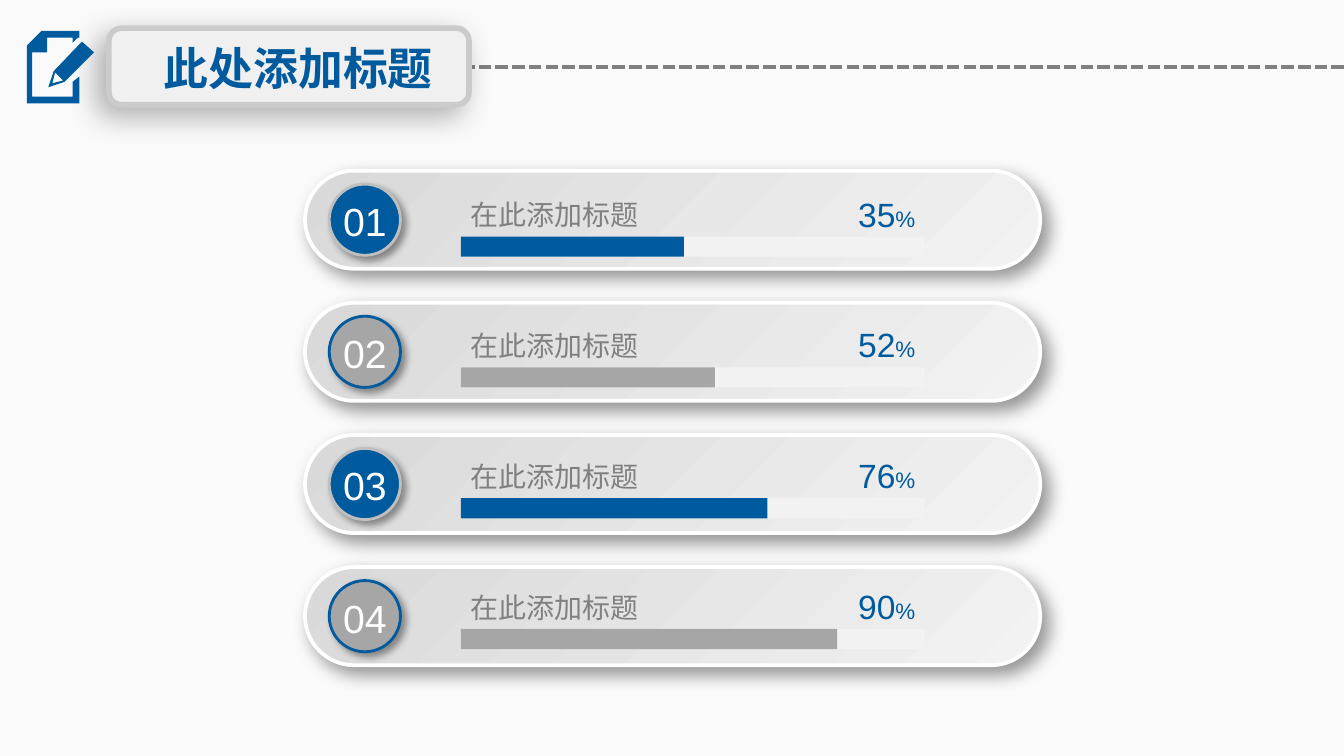
from dataclasses import dataclass
from typing import Optional

from lxml.etree import SubElement
from pptx import Presentation
from pptx.dml.color import RGBColor
from pptx.enum.dml import MSO_LINE
from pptx.enum.shapes import MSO_CONNECTOR, MSO_SHAPE
from pptx.enum.text import MSO_ANCHOR, MSO_AUTO_SIZE, PP_ALIGN
from pptx.oxml.ns import qn
from pptx.util import Inches, Pt


@dataclass(frozen=True)
class Theme:
    font: str = "Arial"
    blue: str = "005A9E"
    grey: str = "A6A6A6"
    text_grey: str = "808080"
    silver: str = "BFBFBF"
    frame: str = "CBCBCB"
    white: str = "FFFFFF"
    track: str = "F2F2F2"
    page_fill: tuple = ("FAFAFA", "FCFCFC")
    title_fill: tuple = ("F0F0F0", "F1F1F1")
    pill_fill: tuple = ("D9D9D9", "F2F2F2")
    title_size: int = 24
    number_size: int = 21
    value_size: int = 18
    label_size: int = 15
    percent_size: int = 12


@dataclass(frozen=True)
class Area:
    left: float
    top: float
    width: float
    height: float

    def lengths(self) -> tuple:
        return tuple(Inches(v) for v in (self.left, self.top, self.width, self.height))


@dataclass(frozen=True)
class Shadow:
    opacity: int
    blur: float
    distance: float
    angle: int


@dataclass(frozen=True)
class Progress:
    number: str
    label: str
    value: str
    bar_width: float
    fill: str
    ring: str


THEME = Theme()
LABEL = "在此添加标题"
ROWS = [
    Progress("01", LABEL, "35", 1.66, THEME.blue, THEME.silver),
    Progress("02", LABEL, "52", 1.89, THEME.grey, THEME.blue),
    Progress("03", LABEL, "76", 2.28, THEME.blue, THEME.silver),
    Progress("04", LABEL, "90", 2.80, THEME.grey, THEME.blue),
]
# Pills and their contents are spread over slightly different heights
PILL_PITCH = 2.95 / 3
BAR_PITCH = 2.92 / 3

# Icon outlines, in hundredths of an inch
SHEET = [[(54, 72), (24, 72), (24, 39), (35, 39), (35, 28), (54, 28), (54, 32),
          (58, 28), (59, 28), (59, 23), (31, 23), (20, 34), (20, 77), (59, 77),
          (59, 57), (54, 61)]]
PENCIL = [[(40, 53), (36, 65), (48, 61), (70, 39), (61, 31)],
          [(47, 60), (39, 62), (41, 54)]]


def rgb(color: str) -> RGBColor:
    return RGBColor.from_string(color)


def paint(fill, color) -> None:
    """Fill with one colour, or with a diagonal blend of two."""
    if isinstance(color, str):
        fill.solid()
        fill.fore_color.rgb = rgb(color)
        return
    fill.gradient()
    fill.gradient_angle = 315
    for stop, stop_color in zip(fill.gradient_stops, color):
        stop.color.rgb = rgb(stop_color)


def add_shadow(shape, shadow: Shadow) -> None:
    effects = shape.element.spPr.find(qn("a:effectLst"))
    outer = SubElement(effects, qn("a:outerShdw"), blurRad=str(Pt(shadow.blur)),
                       dist=str(Pt(shadow.distance)), dir=str(shadow.angle * 60000),
                       algn="ctr", rotWithShape="0")
    color = SubElement(outer, qn("a:srgbClr"), val="000000")
    SubElement(color, qn("a:alpha"), val=str(shadow.opacity * 1000))


def add_box(shapes, kind, area: Area, fill, line: Optional[str] = None,
            line_width: float = 0, shadow: Optional[Shadow] = None):
    box = shapes.add_shape(kind, *area.lengths())
    box.shadow.inherit = False
    paint(box.fill, fill)
    if line:
        box.line.color.rgb = rgb(line)
        box.line.width = Pt(line_width)
    else:
        box.line.fill.background()
    if shadow:
        add_shadow(box, shadow)
    return box


def format_span(span, size: int, color: str, bold: bool = False) -> None:
    span.font.name = THEME.font
    span.font.size = Pt(size)
    span.font.bold = bold
    span.font.color.rgb = rgb(color)


def add_text(shapes, area: Area, text: str, size: int, color: str,
             align=PP_ALIGN.LEFT, insets: tuple = (0.07, 0.04)):
    frame = shapes.add_textbox(*area.lengths()).text_frame
    frame.word_wrap = True
    frame.auto_size = MSO_AUTO_SIZE.SHAPE_TO_FIT_TEXT
    frame.margin_left = frame.margin_right = Inches(insets[0])
    frame.margin_top = frame.margin_bottom = Inches(insets[1])
    frame.text = text
    para = frame.paragraphs[0]
    para.alignment = align
    format_span(para.runs[0], size, color)
    return para


def add_outline(shapes, contours: list, color: str) -> None:
    builder = shapes.build_freeform(*contours[0][0], scale=Inches(0.01))
    for index, points in enumerate(contours):
        if index:
            builder.move_to(*points[0])
        builder.add_line_segments(points[1:], close=True)
    outline = builder.convert_to_shape()
    outline.shadow.inherit = False
    paint(outline.fill, color)
    outline.line.fill.background()


def add_header(page, title_text: str) -> None:
    # Dashed rule
    rule = page.shapes.add_connector(MSO_CONNECTOR.STRAIGHT, Inches(10), Inches(0.5),
                                     Inches(3.19), Inches(0.5))
    rule.line.color.rgb = rgb(THEME.text_grey)
    rule.line.width = Pt(2.25)
    rule.line.dash_style = MSO_LINE.SQUARE_DOT
    SubElement(rule.element.spPr, qn("a:effectLst"))

    # Title on its plate
    plate = add_box(page.shapes, MSO_SHAPE.ROUNDED_RECTANGLE, Area(0.81, 0.21, 2.68, 0.57),
                    THEME.title_fill, THEME.frame, 3, Shadow(30, 16, 7, 135))
    title = page.shapes.title
    title.left, title.top, title.width, title.height = Area(1.12, 0.25, 2.22, 0.5).lengths()
    frame = title.text_frame
    frame.text = title_text
    frame.word_wrap = False
    frame.auto_size = MSO_AUTO_SIZE.SHAPE_TO_FIT_TEXT
    frame.vertical_anchor = MSO_ANCHOR.TOP
    para = frame.paragraphs[0]
    para.alignment = PP_ALIGN.LEFT
    format_span(para.runs[0], THEME.title_size, THEME.blue, bold=True)
    plate.element.addnext(title.element)

    # Sheet and pencil icon
    icon = page.shapes.add_group_shape()
    for contours in (SHEET, PENCIL):
        add_outline(icon.shapes, contours, THEME.blue)


def add_progress(page, index: int, row: Progress) -> None:
    shapes = page.shapes.add_group_shape().shapes
    pill_shift, bar_shift = index * PILL_PITCH, index * BAR_PITCH

    # Pill and numbered disc
    pill = add_box(shapes, MSO_SHAPE.ROUNDED_RECTANGLE, Area(2.27, 1.27 + pill_shift, 5.47, 0.73),
                   THEME.pill_fill, THEME.white, 2, Shadow(40, 9, 5, 45))
    pill.adjustments[0] = 0.5
    add_box(shapes, MSO_SHAPE.OVAL, Area(2.45, 1.37 + pill_shift, 0.53, 0.53),
            row.fill, row.ring, 1.5, Shadow(40, 4, 3, 45))
    add_text(shapes, Area(2.41, 1.42 + pill_shift, 0.61, 0.45), row.number,
             THEME.number_size, THEME.white, PP_ALIGN.CENTER, (0.1, 0.05))

    # Track and bar
    for width, color in ((3.45, THEME.track), (row.bar_width, row.fill)):
        add_box(shapes, MSO_SHAPE.RECTANGLE, Area(3.43, 1.76 + bar_shift, width, 0.15), color)

    # Label and percentage
    add_text(shapes, Area(3.43, 1.43 + bar_shift, 1.89, 0.33), row.label,
             THEME.label_size, THEME.text_grey)
    para = add_text(shapes, Area(6.09, 1.4 + bar_shift, 0.79, 0.38), row.value,
                    THEME.value_size, THEME.blue, PP_ALIGN.RIGHT)
    percent = para.add_run()
    percent.text = "%"
    format_span(percent, THEME.percent_size, THEME.blue)


def main() -> None:
    deck = Presentation()
    deck.slide_width = Inches(10)
    deck.slide_height = deck.slide_width * 9 // 16
    page = deck.slides.add_slide(deck.slide_layouts[5])
    paint(page.background.fill, THEME.page_fill)
    page.background.fill.gradient_angle = 270
    add_header(page, "此处添加标题")
    for index, row in enumerate(ROWS):
        add_progress(page, index, row)
    deck.save("out.pptx")


if __name__ == "__main__":
    main()
